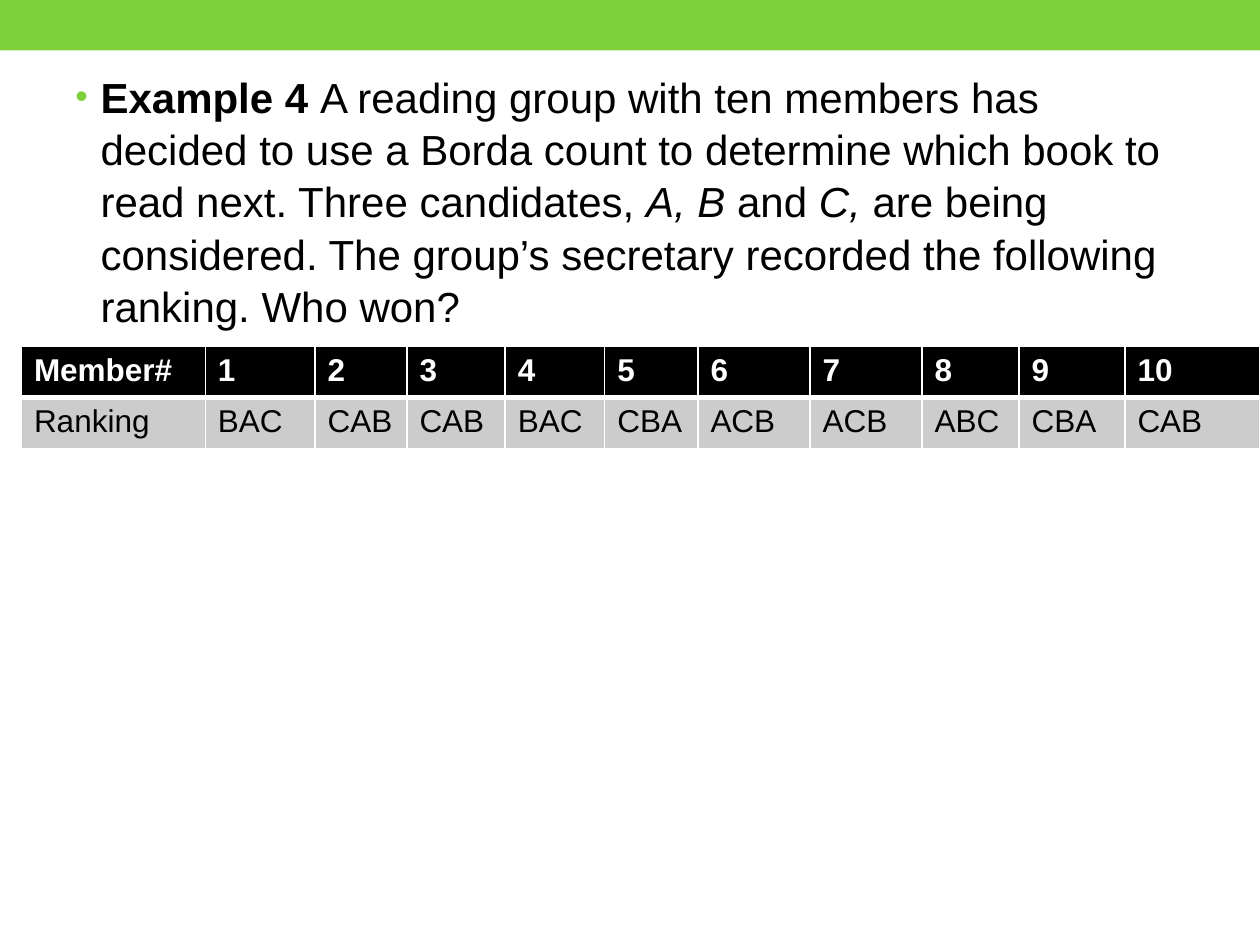
from dataclasses import dataclass

from lxml.etree import SubElement
from pptx import Presentation
from pptx.dml.color import RGBColor
from pptx.enum.shapes import MSO_SHAPE
from pptx.oxml.ns import qn
from pptx.util import Inches, Pt


@dataclass(frozen=True)
class Theme:
    """Colours, font and type sizes of the slide."""
    accent: str = "7FD13B"
    ink: str = "000000"
    paper: str = "FFFFFF"
    band: str = "CCCCCC"
    font: str = "Arial"
    body: int = 24
    table: int = 18


THEME = Theme()
QUESTION = [
    ("Example 4 ", {"bold": True}),
    ("A reading group with ten members has decided to use a Borda count to "
     "determine which book to read next. Three candidates, ", {}),
    ("A, B ", {"italic": True}),
    ("and ", {}),
    ("C,", {"italic": True}),
    (" are being considered. The group’s secretary recorded the following "
     "ranking. Who won?", {}),
]
RANKINGS = ["BAC", "CAB", "CAB", "BAC", "CBA", "ACB", "ACB", "ABC", "CBA", "CAB"]
COLUMN_WIDTHS = [1.46, 0.87, 0.73, 0.78, 0.79, 0.74, 0.89, 0.89, 0.77, 0.84, 1.07]


def add_text(paragraph, text, size=THEME.body, color=THEME.ink, bold=False, italic=False):
    """Append a formatted run to a paragraph."""
    run = paragraph.add_run()
    run.text = text
    font = run.font
    font.name, font.size, font.bold, font.italic = THEME.font, Pt(size), bold, italic
    font.color.rgb = RGBColor.from_string(color)


def add_banner(slide, left, top, width, height):
    """Draw the coloured strip across the top."""
    banner = slide.shapes.add_shape(MSO_SHAPE.RECTANGLE, left, top, width, height)
    banner.shadow.inherit = False
    banner.fill.solid()
    banner.fill.fore_color.rgb = RGBColor.from_string(THEME.accent)
    banner.line.fill.background()


def set_bullet(paragraph, indent):
    """Give a paragraph a hanging accent bullet."""
    properties = paragraph._p.get_or_add_pPr()
    properties.set("marL", str(indent))
    properties.set("indent", str(-indent))
    color = SubElement(properties, qn("a:buClr"))
    SubElement(color, qn("a:srgbClr"), val=THEME.accent)
    SubElement(properties, qn("a:buSzPct"), val="85000")
    SubElement(properties, qn("a:buFont"), typeface=THEME.font)
    SubElement(properties, qn("a:buChar"), char="•")


def add_question(slide, left, top, width, height):
    """Write the bulleted example question."""
    frame = slide.shapes.add_textbox(left, top, width, height).text_frame
    frame.word_wrap = True
    paragraph = frame.paragraphs[0]
    paragraph.space_before = Pt(THEME.body * 0.2)
    paragraph.line_spacing = 1.04
    set_bullet(paragraph, Inches(0.2))
    for text, style in QUESTION:
        add_text(paragraph, text, **style)


def set_borders(cell, bottom):
    """Outline a cell in the paper colour with its own bottom weight."""
    properties = cell._tc.get_or_add_tcPr()
    weights = {"a:lnL": 1, "a:lnR": 1, "a:lnT": 1, "a:lnB": bottom}
    for position, (side, weight) in enumerate(weights.items()):
        line = SubElement(properties, qn(side), w=str(Pt(weight)))
        fill = SubElement(line, qn("a:solidFill"))
        SubElement(fill, qn("a:srgbClr"), val=THEME.paper)
        properties.insert(position, line)


def add_rankings(slide, left, top, width, height):
    """Tabulate each member's ranking, sharing the width by column weight."""
    rows = [
        (["Member#", *map(str, range(1, len(RANKINGS) + 1))], THEME.ink, THEME.paper, True, 3),
        (["Ranking", *RANKINGS], THEME.band, THEME.ink, False, 1),
    ]
    table = slide.shapes.add_table(
        len(rows), len(COLUMN_WIDTHS), left, top, width, height).table
    for column, weight in zip(table.columns, COLUMN_WIDTHS):
        column.width = int(width * weight / sum(COLUMN_WIDTHS))
    for row, (texts, fill, color, bold, bottom) in enumerate(rows):
        for column, text in enumerate(texts):
            cell = table.cell(row, column)
            cell.fill.solid()
            cell.fill.fore_color.rgb = RGBColor.from_string(fill)
            set_borders(cell, bottom)
            add_text(cell.text_frame.paragraphs[0], text,
                     size=THEME.table, color=color, bold=bold)


def main():
    """Build and save the slide."""
    deck = Presentation()
    deck.slide_width, deck.slide_height = Inches(10), Inches(7.5)
    slide = deck.slides.add_slide(deck.slide_layouts[6])
    add_banner(slide, 0, 0, deck.slide_width, Inches(0.4))
    add_question(slide, Inches(0.5), Inches(0.5), Inches(9), Inches(6.31))
    add_rankings(slide, Inches(0.17), Inches(2.75), Inches(9.83), Inches(0.81))
    deck.save("out.pptx")


if __name__ == "__main__":
    main()
